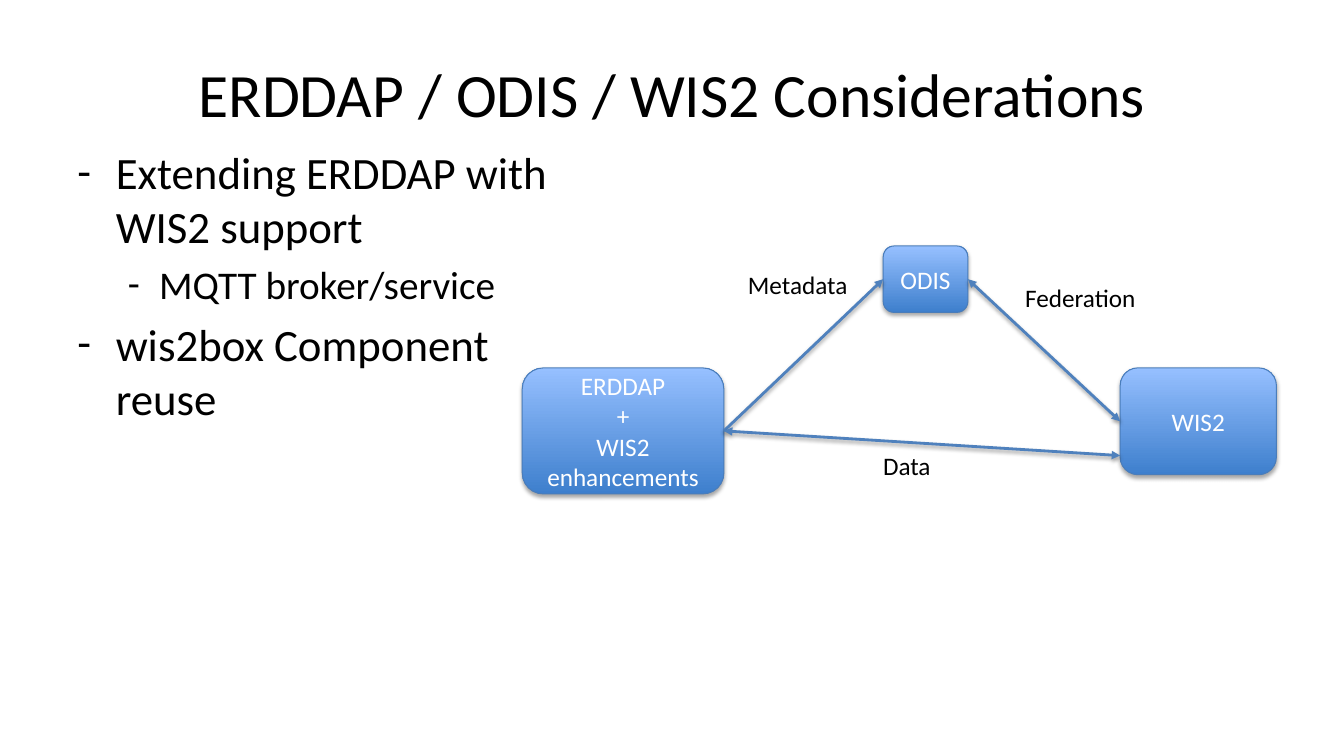
from dataclasses import dataclass

import pptx
import pptx.dml.color
import pptx.enum.shapes
import pptx.enum.text
import pptx.oxml
import pptx.oxml.ns
import pptx.util
from lxml import etree

Inches, Pt = pptx.util.Inches, pptx.util.Pt
qn = pptx.oxml.ns.qn
ALIGN = pptx.enum.text.PP_ALIGN
ANCHOR = pptx.enum.text.MSO_ANCHOR
LEFT_SITE, RIGHT_SITE = 1, 3


@dataclass(frozen=True)
class Theme:
    font: str = "Calibri"
    ink: str = "000000"
    node_text: str = "FFFFFF"
    node_bottom: str = "3E7FCD"
    node_top: str = "96C0FF"
    node_edge: str = "4A7DBA"
    arrow: str = "4F81BD"
    title_size: int = 44
    bullet_sizes: tuple = (32, 28)
    label_size: int = 18


def rgb(value):
    return pptx.dml.color.RGBColor.from_string(value)


class SlideBuilder:
    def __init__(self, slide, theme):
        self.slide, self.theme = slide, theme

    def add_run(self, paragraph, text, size, color):
        run = paragraph.add_run()
        run.text = text
        run.font.name = self.theme.font
        run.font.size = Pt(size)
        run.font.color.rgb = rgb(color)

    def add_shadow(self, effects, opacity, distance):
        shadow = etree.SubElement(
            effects, qn("a:outerShdw"), blurRad=str(Pt(3.1)),
            dist=str(Pt(distance)), dir="5400000", rotWithShape="0")
        color = etree.SubElement(shadow, qn("a:srgbClr"), val=self.theme.ink)
        etree.SubElement(color, qn("a:alpha"), val=str(opacity * 1000))

    def title(self, text, left, top, width, height):
        title = self.slide.shapes.title
        title.left, title.top = Inches(left), Inches(top)
        title.width, title.height = Inches(width), Inches(height)
        title.text_frame.vertical_anchor = ANCHOR.MIDDLE
        paragraph = title.text_frame.paragraphs[0]
        paragraph.alignment = ALIGN.CENTER
        self.add_run(paragraph, text, self.theme.title_size, self.theme.ink)

    def text_box(self, left, top, width, height, wrap):
        box = self.slide.shapes.add_textbox(
            Inches(left), Inches(top), Inches(width), Inches(height))
        box.text_frame.word_wrap = wrap
        return box.text_frame

    def bullets(self, items, left, top, width, height):
        frame = self.text_box(left, top, width, height, True)
        indents = ((0.38, -0.38), (0.81, -0.31))
        for index, (level, text) in enumerate(items):
            paragraph = frame.add_paragraph() if index else frame.paragraphs[0]
            size = self.theme.bullet_sizes[level]
            paragraph.level = level
            margin, hanging = indents[level]
            properties = paragraph._p.get_or_add_pPr()
            properties.set("marL", str(Inches(margin)))
            properties.set("indent", str(Inches(hanging)))
            etree.SubElement(properties, qn("a:buFont"), typeface=self.theme.font)
            etree.SubElement(properties, qn("a:buChar"), char="-")
            if index:
                paragraph.space_before = Pt(size * 0.2)
            self.add_run(paragraph, text, size, self.theme.ink)

    def label(self, text, left, top, width):
        frame = self.text_box(left, top, width, 0.4, False)
        frame.auto_size = pptx.enum.text.MSO_AUTO_SIZE.SHAPE_TO_FIT_TEXT
        self.add_run(frame.paragraphs[0], text, self.theme.label_size, self.theme.ink)

    def node(self, paragraphs, left, top, width, height):
        """Each paragraph is a list of lines."""
        node = self.slide.shapes.add_shape(
            pptx.enum.shapes.MSO_SHAPE.ROUNDED_RECTANGLE,
            Inches(left), Inches(top), Inches(width), Inches(height))
        node.fill.gradient()
        node.fill.gradient_angle = 90
        colors = (self.theme.node_bottom, self.theme.node_top)
        for stop, color, position in zip(node.fill.gradient_stops, colors, (0, 1)):
            stop.color.rgb = rgb(color)
            stop.position = position
        node.line.color.rgb = rgb(self.theme.node_edge)
        node.line.width = Pt(0.75)
        node.shadow.inherit = False
        self.add_shadow(node._element.spPr.find(qn("a:effectLst")), 35, 1.8)

        frame = node.text_frame
        frame.word_wrap = True
        frame.vertical_anchor = ANCHOR.MIDDLE
        for index, lines in enumerate(paragraphs):
            paragraph = frame.add_paragraph() if index else frame.paragraphs[0]
            paragraph.alignment = ALIGN.CENTER
            for number, line in enumerate(lines):
                if number:
                    paragraph.add_line_break()
                self.add_run(paragraph, line, self.theme.label_size,
                             self.theme.node_text)
        return node

    def arrow(self, source, target, end=None, both=True):
        """Join right side of source to left side of target, or to a free end."""
        end_x, end_y = end or (0, 0)
        arrow = self.slide.shapes.add_connector(
            pptx.enum.shapes.MSO_CONNECTOR.STRAIGHT,
            source.left + source.width, source.top + source.height // 2,
            Inches(end_x), Inches(end_y))
        arrow.begin_connect(source, RIGHT_SITE)
        if end is None:
            arrow.end_connect(target, LEFT_SITE)
        arrow.line.color.rgb = rgb(self.theme.arrow)
        arrow.line.width = Pt(2)
        line = arrow.line._get_or_add_ln()
        for tag in ("a:headEnd", "a:tailEnd") if both else ("a:tailEnd",):
            etree.SubElement(line, qn(tag), type="triangle")
        effects = etree.SubElement(arrow._element.spPr, qn("a:effectLst"))
        self.add_shadow(effects, 38, 1.6)


def main():
    deck = pptx.Presentation()
    deck.slide_width, deck.slide_height = Inches(13.33), Inches(7.5)
    builder = SlideBuilder(deck.slides.add_slide(deck.slide_layouts[5]), Theme())

    # Title and considerations
    builder.title("ERDDAP / ODIS / WIS2 Considerations", 0.67, 0.3, 12, 1.25)
    builder.bullets([
        (0, "Extending ERDDAP with WIS2 support"),
        (1, "MQTT broker/service"),
        (0, "wis2box Component reuse"),
    ], 0.67, 1.39, 5.03, 4.95)

    # Systems
    erddap = builder.node([["ERDDAP", "+"], ["WIS2 enhancements"]],
                          5.18, 3.65, 2, 1.25)
    wis2 = builder.node([["WIS2"]], 11.11, 3.65, 1.55, 1.06)
    odis = builder.node([["ODIS"]], 8.76, 2.44, 0.84, 0.66)

    # Flows between systems
    builder.arrow(odis, wis2)
    builder.arrow(erddap, odis, both=False)
    builder.arrow(erddap, wis2, end=(11.11, 4.52))

    # Flow labels
    builder.label("Metadata", 7.32, 2.62, 1.2)
    builder.label("Data", 8.66, 4.42, 0.68)
    builder.label("Federation", 10.07, 2.75, 1.31)

    deck.save("out.pptx")


if __name__ == "__main__":
    main()
